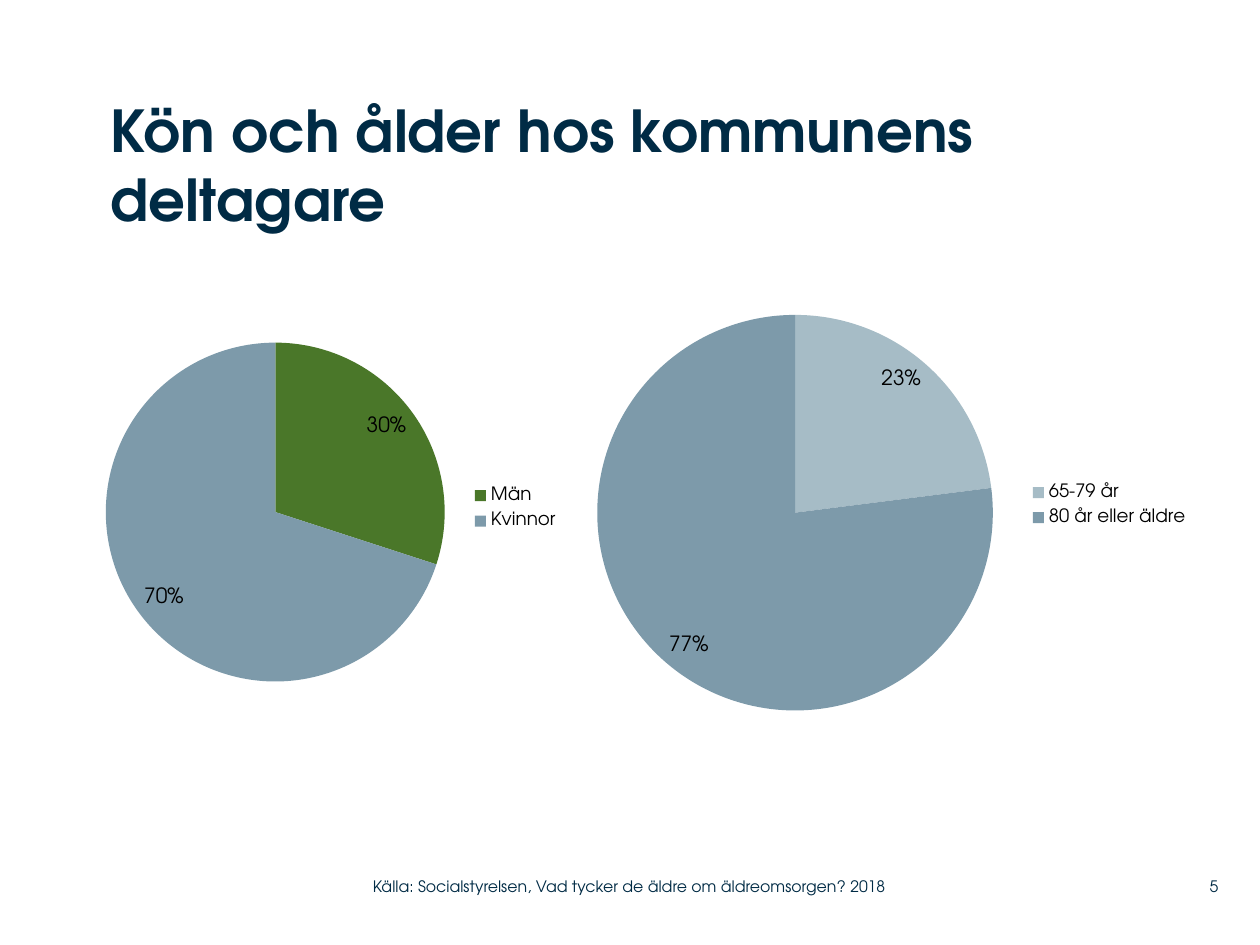
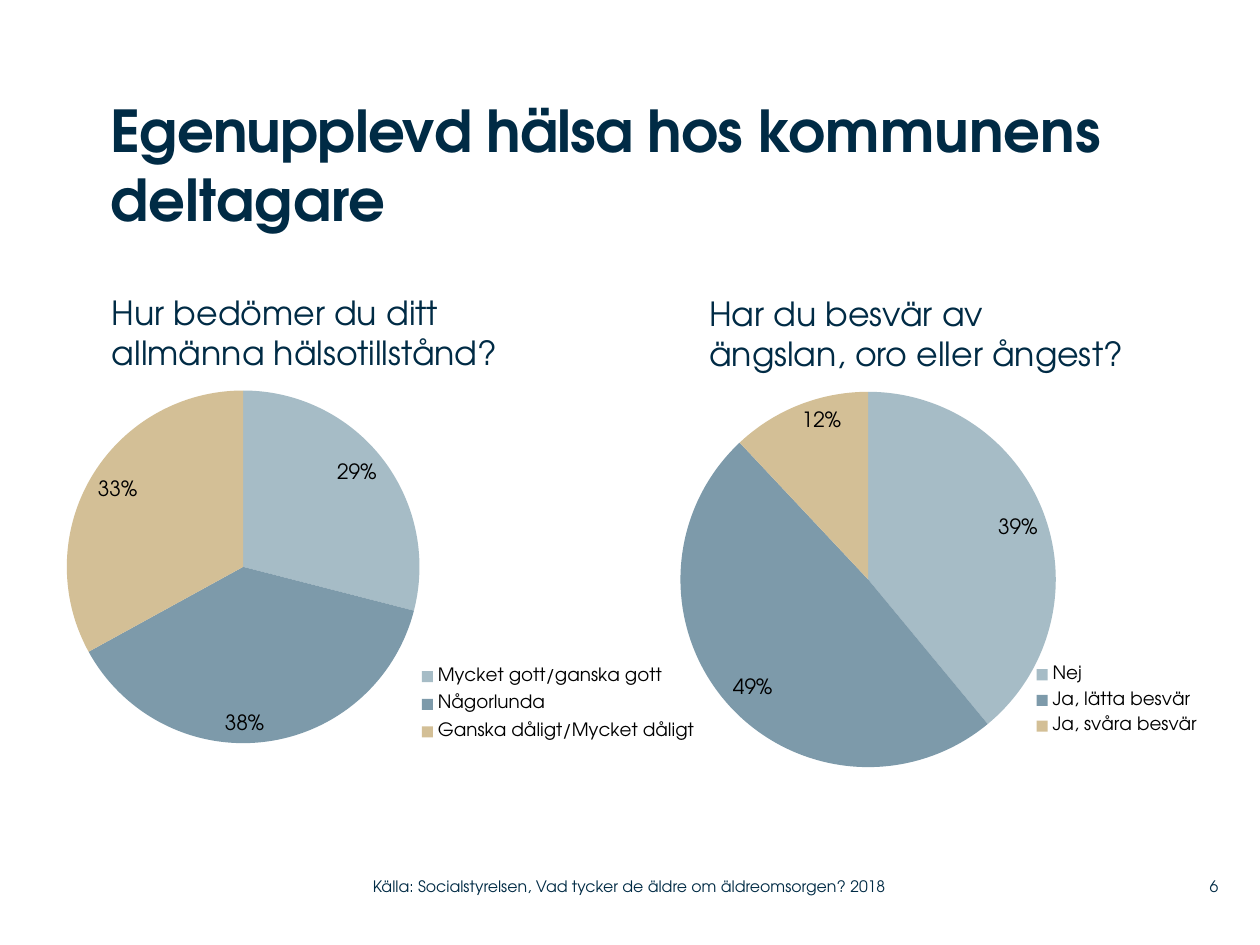
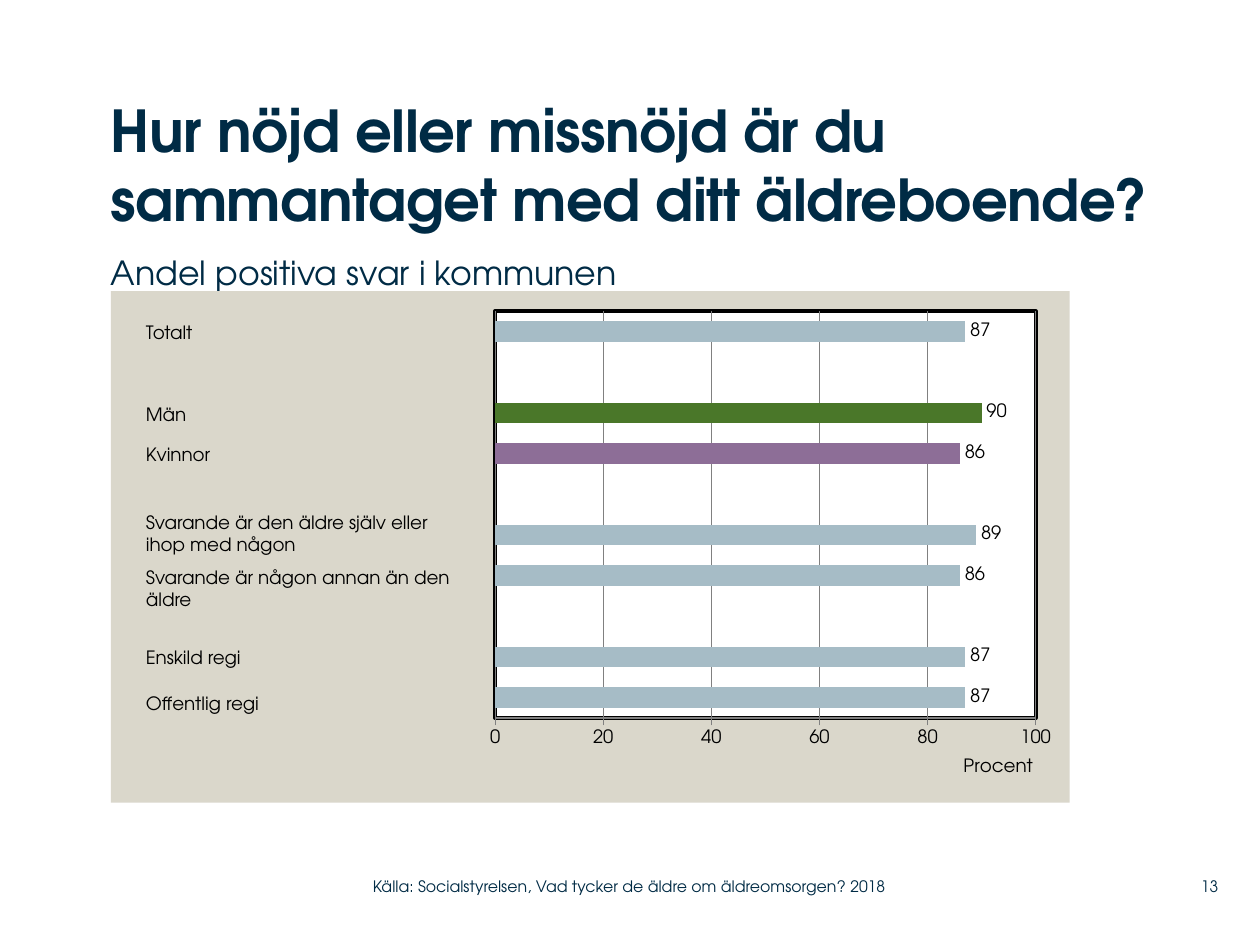
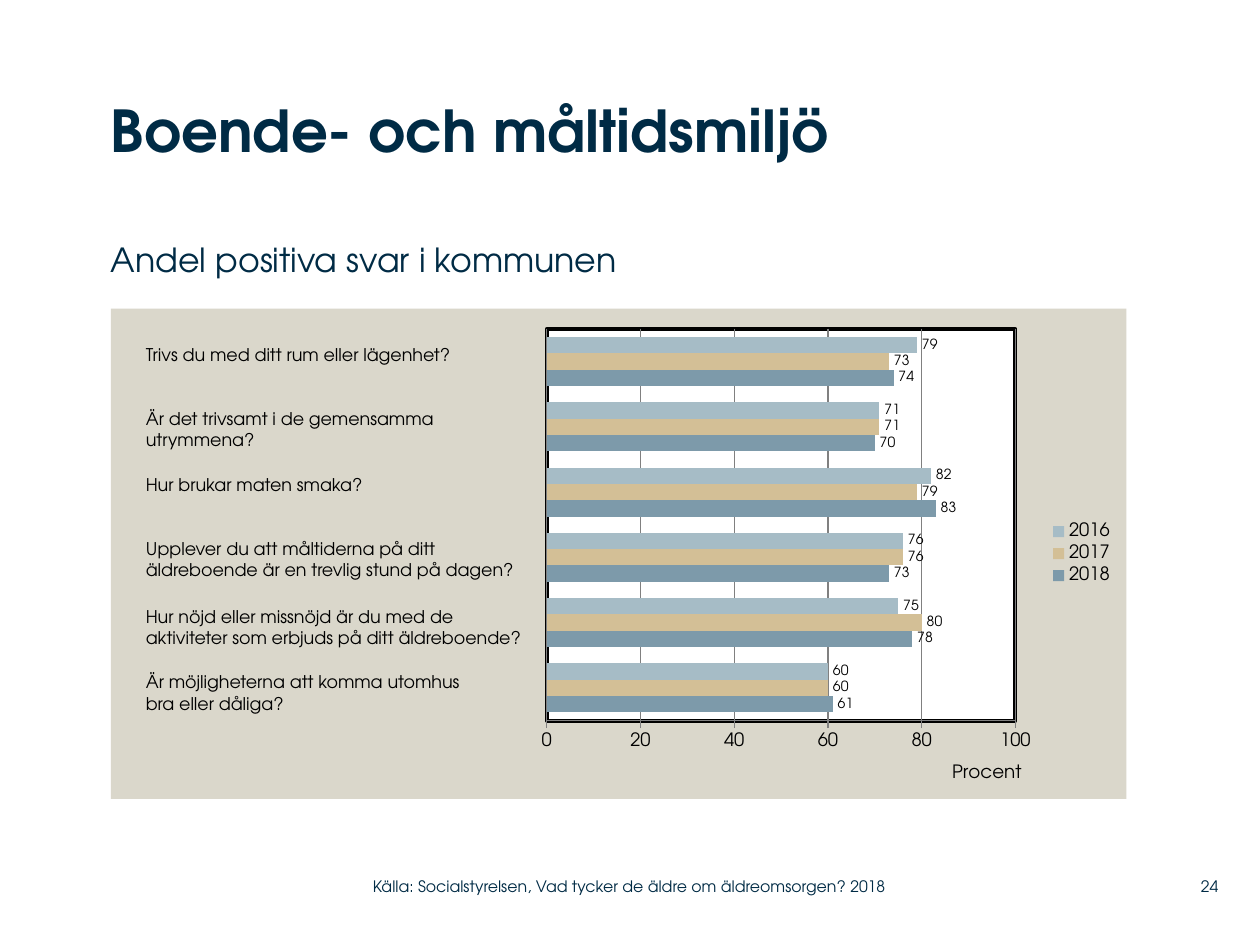
"""Build four slides of survey results on elderly care."""
from lxml import etree
from pptx import Presentation
from pptx.chart.data import CategoryChartData
from pptx.dml.color import RGBColor
from pptx.enum import chart as chart_enum, text as text_enum
from pptx.oxml import ns, parse_xml
from pptx.util import Inches, Pt

FONT = "TeX Gyre Adventor"
NAVY = RGBColor(0x00, 0x2B, 0x45)
BLACK = RGBColor(0x00, 0x00, 0x00)
GRAY = RGBColor(0x80, 0x80, 0x80)
GREEN = RGBColor(0x4A, 0x77, 0x29)
PURPLE = RGBColor(0x8D, 0x6E, 0x97)
LIGHT_BLUE = RGBColor(0xA6, 0xBC, 0xC6)
BLUE = RGBColor(0x7D, 0x9A, 0xAA)
SAND = RGBColor(0xD3, 0xBF, 0x96)
PANEL = RGBColor(0xDA, 0xD7, 0xCB)
WHITE = RGBColor(0xFF, 0xFF, 0xFF)

SOURCE = "Källa: Socialstyrelsen, Vad tycker de äldre om äldreomsorgen? 2018"
POSITIVE_SHARE = "Andel positiva svar i kommunen"
LEFT = 0.88
LABEL_LEFT = 1.06
PIE_SIZE = (5.42, 3.42)


def style_font(font, size, color=BLACK, bold=False):
    """Apply the shared typeface with a size and colour."""
    font.name = FONT
    font.size = Pt(size)
    font.bold = bold
    font.color.rgb = color


def clear_insets(frame):
    """Remove the inner margins of a text frame."""
    frame.margin_left = frame.margin_right = 0
    frame.margin_top = frame.margin_bottom = 0


def add_text(slide, box, content, size, color=NAVY, inset=True, align=None, anchor=None):
    """Add a wrapping text box with one font throughout."""
    frame = slide.shapes.add_textbox(*map(Inches, box)).text_frame
    frame.word_wrap = True
    frame.vertical_anchor = anchor
    if not inset:
        clear_insets(frame)
    frame.text = content
    for paragraph in frame.paragraphs:
        paragraph.alignment = align
        style_font(paragraph.font, size, color)
    return frame


def add_slide(presentation, number, title_width, title_parts):
    """Add a slide with its title, source line and page number."""
    slide = presentation.slides.add_slide(presentation.slide_layouts[5])
    title = slide.shapes.title
    title.left, title.top = Inches(LEFT), Inches(0.75)
    title.width, title.height = Inches(title_width), Inches(1.42)
    frame = title.text_frame
    clear_insets(frame)
    frame.word_wrap = True
    frame.auto_size = text_enum.MSO_AUTO_SIZE.NONE
    frame.vertical_anchor = text_enum.MSO_ANCHOR.TOP
    paragraph = frame.paragraphs[0]
    paragraph.alignment = text_enum.PP_ALIGN.LEFT
    style_font(paragraph.font, 33, NAVY, bold=True)
    for content, spacing in title_parts:
        run = paragraph.add_run()
        run.text = content
        if spacing:
            run.font._element.set("spc", str(round(spacing * 100)))
    middle = text_enum.MSO_ANCHOR.MIDDLE
    add_text(slide, (2.96, 6.89, 4.43, 0.29), SOURCE, 9, inset=False, anchor=middle)
    add_text(slide, (9.2, 6.89, 0.47, 0.29), str(number), 9, inset=False,
             align=text_enum.PP_ALIGN.RIGHT, anchor=middle)
    return slide


def add_subtitle(slide, top, width):
    """Add the line that tells what the bars measure."""
    frame = add_text(slide, (LEFT, top, width, 0.45), POSITIVE_SHARE, 19, inset=False)
    frame.paragraphs[0].space_after = Pt(8)


def place(element, chart_box, box, inner=False):
    """Lay out a chart part at a slide position given in inches."""
    for old in element.findall(ns.qn("c:layout")):
        element.remove(old)
    left, top, width, height = chart_box
    fractions = [(box[0] - left) / width, (box[1] - top) / height]
    fractions += [length / whole for length, whole in zip(box[2:], (width, height))]
    settings = [("layoutTarget", "inner")] if inner else []
    settings += [("xMode", "edge"), ("yMode", "edge")]
    settings += [(name, f"{value:.4f}") for name, value in zip("xywh", fractions)]
    layout = etree.Element(ns.qn("c:layout"))
    manual = etree.SubElement(layout, ns.qn("c:manualLayout"))
    for name, value in settings:
        etree.SubElement(manual, ns.qn("c:" + name)).set("val", value)
    overlay = element.find(ns.qn("c:overlay"))
    element.insert(0 if overlay is None else element.index(overlay), layout)


def area_style(fill, line=""):
    """Return chart area properties with a fill and an outline."""
    outline = f'<a:ln w="{Pt(2.25)}">' if line else "<a:ln>"
    stroke = f'<a:solidFill><a:srgbClr val="{line}"/></a:solidFill>' if line else "<a:noFill/>"
    return parse_xml(
        f'<c:spPr {ns.nsdecls("c", "a")}><a:solidFill><a:srgbClr val="{fill}"/>'
        f'</a:solidFill>{outline}{stroke}</a:ln></c:spPr>')


def add_chart(slide, kind, box, plot_box, categories, series):
    """Add a chart with the shared font and a fixed plot area."""
    data = CategoryChartData()
    data.categories = categories
    for name, values in series:
        data.add_series(name, values)
    chart = slide.shapes.add_chart(kind, *map(Inches, box), data).chart
    chart.has_title = False
    chart.has_legend = False
    style_font(chart.font, 10)
    place(chart.element.find(".//" + ns.qn("c:plotArea")), box, plot_box, inner=True)
    return chart


def add_legend(chart):
    """Show the legend on the right."""
    chart.has_legend = True
    chart.legend.position = chart_enum.XL_LEGEND_POSITION.RIGHT
    chart.legend.include_in_layout = False
    style_font(chart.legend.font, 10.5)
    return chart.legend


def add_pie(slide, corner, plot_corner, diameter, legend_box, shares):
    """Add a pie of (category, value, colour) shares with percent labels."""
    box = (*corner, *PIE_SIZE)
    categories, values, colors = zip(*shares)
    chart = add_chart(slide, chart_enum.XL_CHART_TYPE.PIE, box,
                      (*plot_corner, diameter, diameter), categories, [("Series 1", values)])
    place(add_legend(chart)._element, box, legend_box)
    plot = chart.plots[0]
    plot.vary_by_categories = True
    for index, color in enumerate(colors):
        fill = plot.series[0].points[index].format.fill
        fill.solid()
        fill.fore_color.rgb = color
    plot.has_data_labels = True
    labels = plot.data_labels
    labels.show_value = False
    labels.show_percentage = True
    labels.number_format = "0%"
    labels.number_format_is_linked = False
    labels.position = chart_enum.XL_LABEL_POSITION.INSIDE_END
    style_font(labels.font, 12)


def add_bars(slide, box, plot_box, axis_title_at, categories, series, label_size):
    """Add a percent bar chart of (name, values, colour) series on a panel."""
    chart = add_chart(slide, chart_enum.XL_CHART_TYPE.BAR_CLUSTERED, box, plot_box,
                      categories, [(name, values) for name, values, color in series])
    chart.element.find(ns.qn("c:chart")).addnext(area_style(PANEL))
    chart.element.find(".//" + ns.qn("c:plotArea")).append(area_style(WHITE, BLACK))
    chart.category_axis.visible = False
    axis = chart.value_axis
    axis.minimum_scale, axis.maximum_scale, axis.major_unit = 0, 100, 20
    axis.major_tick_mark = chart_enum.XL_TICK_MARK.OUTSIDE
    axis.has_major_gridlines = True
    for line in (axis.format.line, axis.major_gridlines.format.line):
        line.color.rgb = GRAY
        line.width = Pt(0.75)
    style_font(axis.tick_labels.font, 10.5)
    frame = axis.axis_title.text_frame
    frame.text = "Procent"
    style_font(frame.paragraphs[0].font, 10.5)
    place(axis.axis_title._element, box, axis_title_at)
    plot = chart.plots[0]
    plot.gap_width = 100
    plot.overlap = 0
    plot.vary_by_categories = False
    for bars, (name, values, color) in zip(plot.series, series):
        bars.format.fill.solid()
        bars.format.fill.fore_color.rgb = color
        bars.invert_if_negative = False
    plot.has_data_labels = True
    plot.data_labels.show_value = True
    plot.data_labels.position = chart_enum.XL_LABEL_POSITION.OUTSIDE_END
    style_font(plot.data_labels.font, label_size)
    return chart


def add_bar_labels(slide, labels, size):
    """Write the (top, width, text) labels beside the bars."""
    for top, width, content in labels:
        height = 0.45 if "\n" in content or "\v" in content else 0.28
        add_text(slide, (LABEL_LEFT, top, width, height), content, size, BLACK)


def build_participants(presentation):
    """Build the slide on gender and age."""
    slide = add_slide(presentation, 5, 7.6, [("Kön och ålder hos kommunens deltagare", 0)])
    add_pie(slide, (-0.23, 2.31), (0.84, 2.72), 2.69, (3.7, 3.8, 0.78, 0.47),
            [("Män", 30, GREEN), ("Kvinnor", 70, BLUE)])
    add_pie(slide, (4.29, 2.36), (4.74, 2.5), 3.14, (8.13, 3.78, 1.35, 0.46),
            [("65-79 år", 23, LIGHT_BLUE), ("80 år eller äldre", 77, BLUE)])


def build_health(presentation):
    """Build the slide on self-rated health."""
    slide = add_slide(presentation, 6, 8.27,
                      [("Egenupplevd hälsa hos ", -0.5), ("kommunens deltagare", 0)])
    add_text(slide, (0.79, 2.27, 4.07, 0.74),
             "Hur bedömer du ditt allmänna hälsotillstånd?", 19)
    add_text(slide, (5.53, 2.28, 3.71, 0.74),
             "Har du besvär av \vängslan, oro eller ångest?", 19)
    add_pie(slide, (0.39, 2.79), (0.53, 3.1), 2.8, (3.28, 5.22, 2.3, 0.74),
            [("Mycket gott/ganska gott", 29, LIGHT_BLUE), ("Någorlunda", 38, BLUE),
             ("Ganska dåligt/Mycket dåligt", 33, SAND)])
    add_pie(slide, (4.9, 2.81), (5.4, 3.11), 2.98, (8.16, 5.22, 1.41, 0.68),
            [("Nej", 39, LIGHT_BLUE), ("Ja, lätta besvär", 49, BLUE),
             ("Ja, svåra besvär", 12, SAND)])


def build_satisfaction(presentation):
    """Build the slide on overall satisfaction."""
    slide = add_slide(presentation, 13, 8.36,
                      [("Hur nöjd eller missnöjd är du sammantaget med ditt äldreboende?", -0.3)])
    add_subtitle(slide, 2, 6.49)
    values = [87, 87, None, 86, 89, None, 86, 90, None, 87]
    chart = add_bars(slide, (LEFT, 2.31, 7.61, 4.06), (3.93, 2.47, 4.29, 3.23), (7.62, 5.98),
                     [str(number) for number in range(1, 11)],
                     [("Series 1", values, GREEN)], 10.5)
    women, men = 6, 7
    for index, value in enumerate(values):
        if value is not None and index != men:
            fill = chart.plots[0].series[0].points[index].format.fill
            fill.solid()
            fill.fore_color.rgb = PURPLE if index == women else LIGHT_BLUE
    add_bar_labels(slide, [
        (2.5, 0.65, "Totalt"),
        (3.15, 0.6, "Män"),
        (3.47, 0.75, "Kvinnor"),
        (4.01, 2.53, "Svarande är den äldre själv eller\nihop med någon"),
        (4.44, 2.65, "Svarande är någon annan än den\näldre"),
        (5.08, 0.97, "Enskild regi"),
        (5.44, 1.15, "Offentlig regi"),
    ], 10.5)


def build_environment(presentation):
    """Build the slide on housing and meals over three years."""
    slide = add_slide(presentation, 24, 8.36, [("Boende- och måltidsmiljö", 0)])
    add_subtitle(slide, 1.9, 7.29)
    chart = add_bars(slide, (LEFT, 2.45, 8.06, 3.89), (4.34, 2.61, 3.72, 3.11), (7.53, 6.03),
                     [str(number) for number in range(1, 7)],
                     [("2018", [61, 78, 73, 83, 70, 74], BLUE),
                      ("2017", [60, 80, 76, 79, 71, 73], SAND),
                      ("2016", [60, 75, 76, 82, 71, 79], LIGHT_BLUE)], 8)
    add_legend(chart)
    add_bar_labels(slide, [
        (2.68, 3.17, "Trivs du med ditt rum eller lägenhet?"),
        (3.19, 3.17, "Är det trivsamt i de gemensamma\nutrymmena?"),
        (3.71, 3.17, "Hur brukar maten smaka?"),
        (4.22, 3.17, "Upplever du att måltiderna på ditt\näldreboende är en trevlig stund på dagen?"),
        (4.76, 3.27, "Hur nöjd eller missnöjd är du med de\v"
                     "aktiviteter som erbjuds på ditt äldreboende?"),
        (5.28, 3.17, "Är möjligheterna att komma utomhus\nbra eller dåliga?"),
    ], 10)


def main():
    """Build and save the presentation."""
    presentation = Presentation()
    presentation.slide_width, presentation.slide_height = Inches(10), Inches(7.5)
    build_participants(presentation)
    build_health(presentation)
    build_satisfaction(presentation)
    build_environment(presentation)
    presentation.save("out.pptx")


if __name__ == "__main__":
    main()
